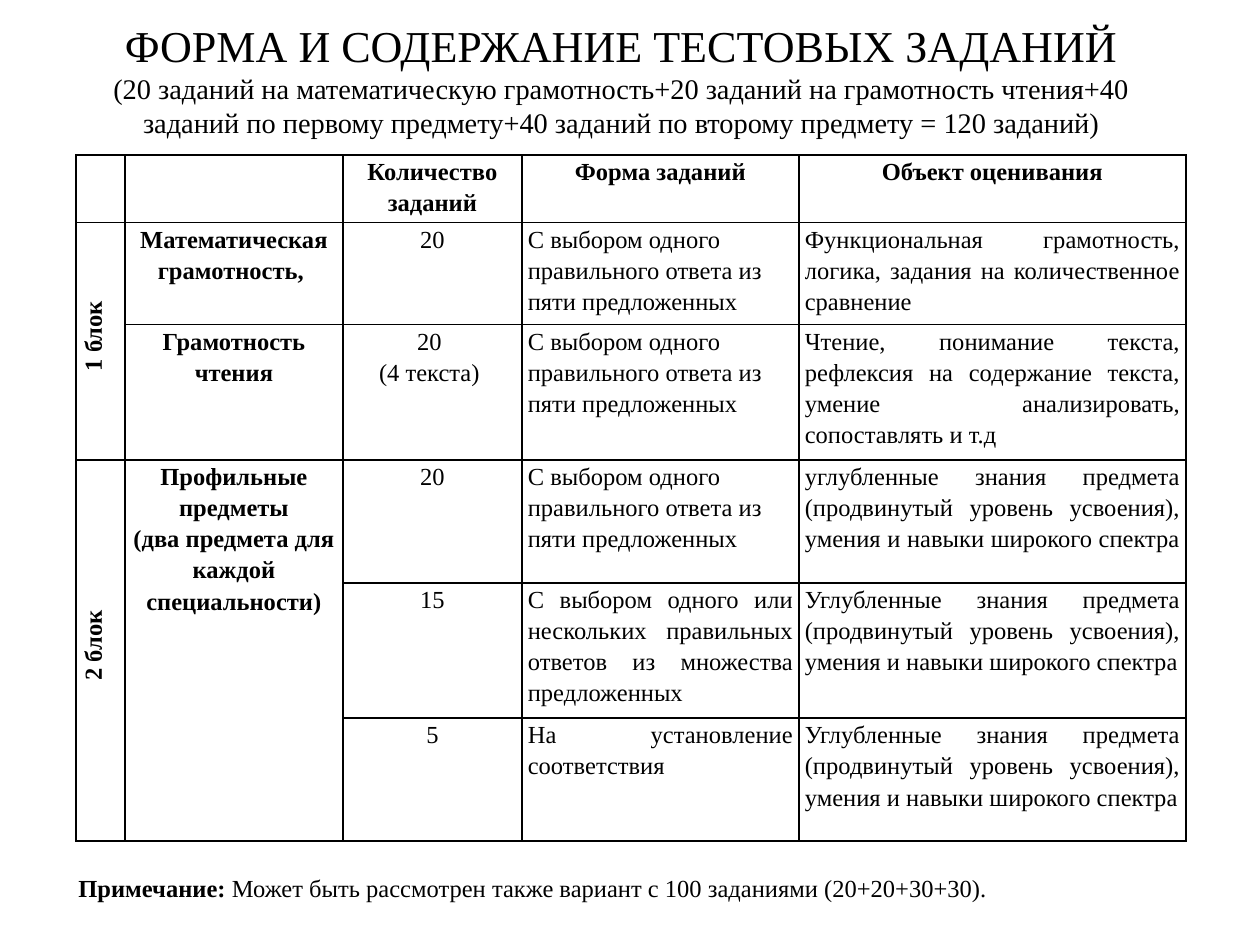
from lxml.etree import SubElement
from pptx import Presentation
from pptx.dml.color import RGBColor
from pptx.enum.text import MSO_ANCHOR as Anchor, PP_ALIGN as Align
from pptx.oxml.ns import qn
from pptx.util import Emu, Pt

COLORS = {"ink": "000000", "paper": "FFFFFF"}
PX = 914400 / 126


def px(length):
    return Emu(round(length * PX))


class SlideBuilder:
    font = "Times New Roman"
    body_size = 14
    spacing = 1.15

    def __init__(self, deck):
        self.page = deck.slides.add_slide(deck.slide_layouts[6])
        fill = self.page.background.fill
        fill.solid()
        fill.fore_color.rgb = RGBColor.from_string(COLORS["paper"])

    def span(self, para, text, size=body_size, bold=False):
        span = para.add_run()
        span.text = text
        span.font.name = self.font
        span.font.size = Pt(size)
        span.font.bold = bold
        span.font.color.rgb = RGBColor.from_string(COLORS["ink"])

    def text_box(self, left, top, width, height, align, anchor, spacing):
        """Add a wrapping box and return its first paragraph."""
        box = self.page.shapes.add_textbox(px(left), px(top), px(width), px(height))
        frame = box.text_frame
        frame.word_wrap = True
        frame.vertical_anchor = anchor
        para = frame.paragraphs[0]
        para.alignment = align
        para.line_spacing = spacing
        return para

    def borders(self, cell):
        props = cell._tc.get_or_add_tcPr()
        for side in ("lnL", "lnR", "lnT", "lnB"):
            line = SubElement(props, qn(f"a:{side}"), w=str(Pt(1)))
            paint = SubElement(line, qn("a:solidFill"))
            SubElement(paint, qn("a:srgbClr"), val=COLORS["ink"])

    def table(self, left, top, columns, rows):
        frame = self.page.shapes.add_table(
            len(rows), len(columns), px(left), px(top), px(sum(columns)), px(sum(rows)))
        table = frame.table
        table.first_row = table.horz_banding = False
        for column, width in zip(table.columns, columns):
            column.width = px(width)
        for row, height in zip(table.rows, rows):
            row.height = px(height)
        for cell in table.iter_cells():
            cell.margin_left = cell.margin_right = px(6)
            cell.margin_top = cell.margin_bottom = 0
            self.borders(cell)
            cell.fill.background()
        return table

    def cell_text(self, cell, lines, align=Align.CENTER, bold=False):
        frame = cell.text_frame
        for index, line in enumerate(lines):
            para = frame.add_paragraph() if index else frame.paragraphs[0]
            para.alignment = align
            para.line_spacing = self.spacing
            self.span(para, line, bold=bold)

    def block_label(self, cell, text):
        """Bold label that reads upwards."""
        self.cell_text(cell, [text], bold=True)
        cell._tc.get_or_add_tcPr().set("vert", "vert270")
        cell.text_frame.paragraphs[0]._p.get_or_add_pPr().set("marL", str(px(10)))


ONE_ANSWER = "С выбором одного правильного ответа из пяти предложенных"
DEEP_KNOWLEDGE = ("глубленные знания предмета (продвинутый уровень усвоения), "
                  "умения и навыки широкого спектра")
HEADERS = ["Количество заданий", "Форма заданий", "Объект оценивания"]

# Count lines, task form, form alignment, object of assessment
TASKS = [
    (["20"], ONE_ANSWER, Align.LEFT,
     "Функциональная грамотность, логика, задания на количественное сравнение"),
    (["20 ", "(4 текста) "], ONE_ANSWER, Align.LEFT,
     "Чтение, понимание текста, рефлексия на содержание текста, "
     "умение анализировать, сопоставлять и т.д"),
    (["20"], ONE_ANSWER, Align.LEFT, "у" + DEEP_KNOWLEDGE + " "),
    (["15"], "С выбором одного или нескольких правильных ответов "
     "из множества предложенных", Align.JUSTIFY, "У" + DEEP_KNOWLEDGE),
    (["5"], "На установление соответствия", Align.JUSTIFY, "У" + DEEP_KNOWLEDGE),
]

# First row, lines
SUBJECTS = [
    (1, ["Математическая грамотность, "]),
    (2, ["Грамотность чтения"]),
    (3, ["Профильные предметы", "(два предмета для каждой специальности)"]),
]

# First row, last row, label
BLOCKS = [(1, 2, "1 блок"), (3, 5, "2 блок")]


def main():
    deck = Presentation()
    deck.slide_width, deck.slide_height = px(1260), px(945)
    slide = SlideBuilder(deck)

    # Title
    title = slide.text_box(54, 0, 1134, 158, Align.CENTER, Anchor.MIDDLE, 1.0)
    slide.span(title, "ФОРМА И СОДЕРЖАНИЕ ТЕСТОВЫХ ЗАДАНИЙ", 25.2)
    title.add_line_break()
    slide.span(title, "(20 заданий на математическую грамотность+20 заданий на "
               "грамотность чтения+40 заданий по первому предмету+40 заданий "
               "по второму предмету = 120 заданий)", 16.2)

    # Table grid and merged blocks
    table = slide.table(76, 155, [49, 218, 179, 277, 387],
                        [65, 102, 131, 123, 131, 123])
    for first, last, label in BLOCKS:
        table.cell(first, 0).merge(table.cell(last, 0))
        slide.block_label(table.cell(first, 0), label)
    table.cell(3, 1).merge(table.cell(5, 1))

    # Table text
    for column, header in enumerate(HEADERS, start=2):
        slide.cell_text(table.cell(0, column), [header], bold=True)
    for row, lines in SUBJECTS:
        slide.cell_text(table.cell(row, 1), lines, bold=True)
    for row, (count, form, form_align, goal) in enumerate(TASKS, start=1):
        slide.cell_text(table.cell(row, 2), count)
        slide.cell_text(table.cell(row, 3), [form], form_align)
        slide.cell_text(table.cell(row, 4), [goal], Align.JUSTIFY)

    # Note
    note = slide.text_box(66, 862, 1121, 44, Align.JUSTIFY, Anchor.TOP, slide.spacing)
    slide.span(note, "Примечание:", bold=True)
    slide.span(note, " Может быть рассмотрен также вариант с 100 заданиями (20+20+30+30).")

    deck.save("out.pptx")


if __name__ == "__main__":
    main()
